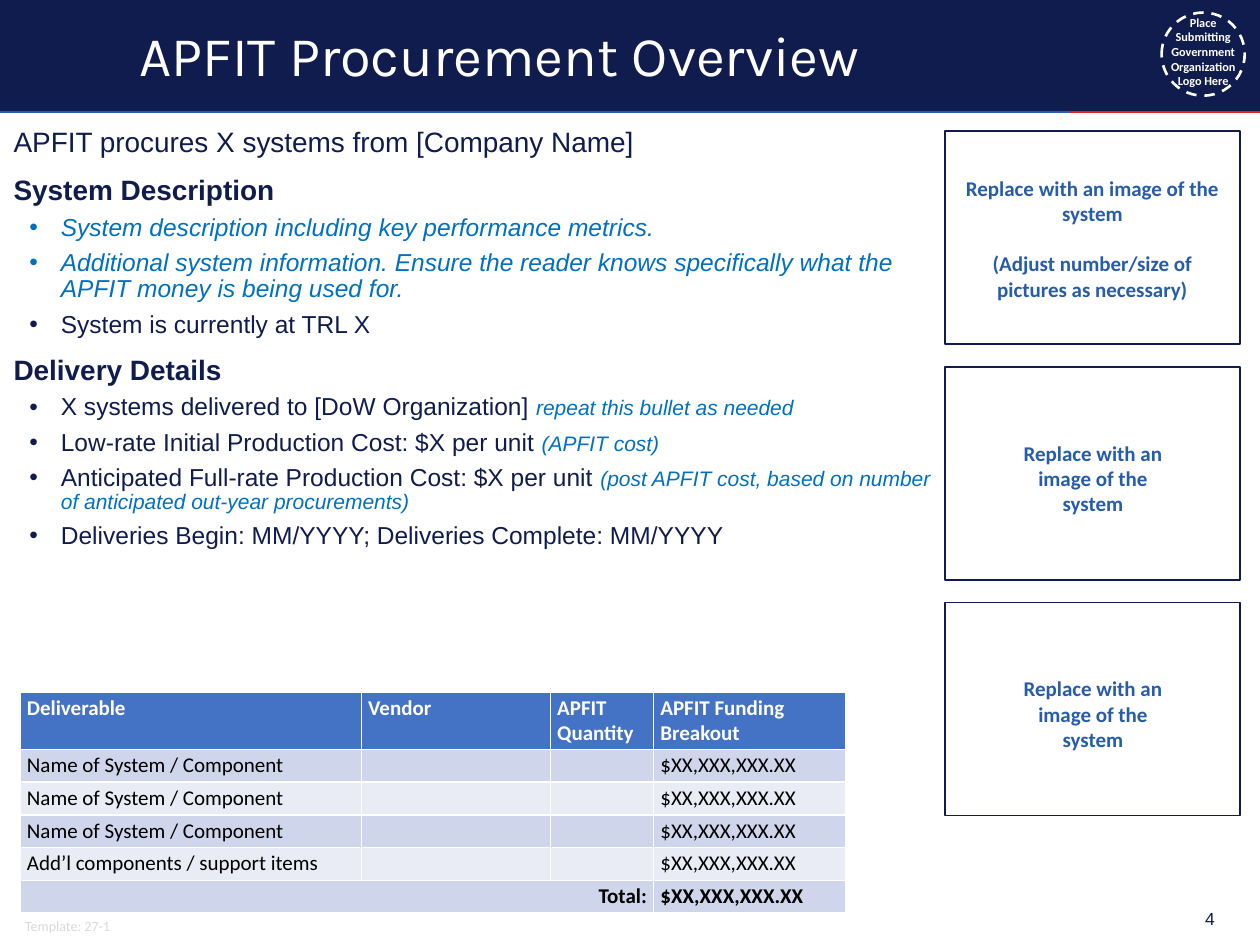
from lxml import etree
from pptx import Presentation
from pptx.dml.color import RGBColor
from pptx.enum.dml import MSO_LINE
from pptx.enum.shapes import MSO_CONNECTOR, MSO_SHAPE
from pptx.enum.text import MSO_ANCHOR, PP_ALIGN
from pptx.oxml.ns import qn
from pptx.util import Pt

RECT, OVAL = MSO_SHAPE.RECTANGLE, MSO_SHAPE.OVAL
LINE = MSO_CONNECTOR.STRAIGHT
DASH = MSO_LINE.DASH
LEFT, MID, RIGHT = PP_ALIGN.LEFT, PP_ALIGN.CENTER, PP_ALIGN.RIGHT
TOP, CENTER = MSO_ANCHOR.TOP, MSO_ANCHOR.MIDDLE

NAVY, BLUE, HINT, RED = "111C4E", "265CAA", "0070C0", "E21E26"
WHITE, BLACK, PALE = "FFFFFF", "000000", "D9D9D9"
HEAD, BANDS = "4472C4", ("CFD5EA", "E9EBF5")

BODY = [
    ("lead", "APFIT procures X systems from [Company Name]", ""),
    ("head", "System Description", ""),
    ("item", "", "System description including key performance metrics."),
    ("item", "", "Additional system information. Ensure the reader knows "
                 "specifically what the APFIT money is being used for."),
    ("item", "System is currently at TRL X", ""),
    ("head", "Delivery Details", ""),
    ("item", "X systems delivered to [DoW Organization] ",
     "repeat this bullet as needed"),
    ("item", "Low-rate Initial Production Cost: $X per unit ", "(APFIT cost)"),
    ("item", "Anticipated Full-rate Production Cost: $X per unit ",
     "(post APFIT cost, based on number of anticipated out-year procurements)"),
    ("item", "Deliveries Begin: MM/YYYY; Deliveries Complete: MM/YYYY", ""),
]
SUM = "$XX,XXX,XXX.XX"
PART = "Name of System / Component"
ROWS = [
    ["Deliverable", "Vendor", "APFIT Quantity", "APFIT Funding Breakout"],
    [PART, "", "", SUM],
    [PART, "", "", SUM],
    [PART, "", "", SUM],
    ["Add’l components / support items", "", "", SUM],
    ["Total:", "", "", SUM],
]
IMAGE = "Replace with an image of the system"


def rgb(code):
    return RGBColor.from_string(code)


def style(font, size, color, name=None, bold=False, slant=False):
    font.size, font.bold, font.italic = Pt(size), bold, slant
    font.color.rgb = rgb(color)
    if name:
        font.name = name


def add_shape(slide, kind, box, fill=None, line=None, width=1, dash=None):
    shape = slide.shapes.add_shape(kind, *map(Pt, box))
    shape.shadow.inherit = False
    if fill:
        shape.fill.solid()
        shape.fill.fore_color.rgb = rgb(fill)
    else:
        shape.fill.background()
    if line:
        shape.line.color.rgb = rgb(line)
        shape.line.width = Pt(width)
        if dash:
            shape.line.dash_style = dash
    else:
        shape.line.fill.background()


def add_line(slide, start, end, color):
    line = slide.shapes.add_connector(LINE, *map(Pt, start + end))
    line.line.color.rgb = rgb(color)
    line.line.width = Pt(1)
    etree.SubElement(line._element.spPr, qn("a:effectLst"))


def add_frame(slide, box, anchor=TOP):
    frame = slide.shapes.add_textbox(*map(Pt, box)).text_frame
    frame.word_wrap = True
    frame.vertical_anchor = anchor
    return frame


def add_text(slide, box, lines, size, color, name="Calibri", bold=False,
             align=LEFT, anchor=TOP, gap=0):
    frame = add_frame(slide, box, anchor)
    for i, line in enumerate(lines):
        para = frame.add_paragraph() if i else frame.paragraphs[0]
        para.text, para.alignment = line, align
        if i:
            para.space_before = Pt(gap)
        style(para.font, size, color, name, bold)


def add_bullet(para):
    props = para._p.get_or_add_pPr()
    props.set("marL", str(Pt(27)))
    props.set("indent", str(-Pt(18)))
    etree.SubElement(props, qn("a:buFont"), typeface="Arial")
    etree.SubElement(props, qn("a:buChar"), char="•")


def add_body(slide, box):
    frame = add_frame(slide, box)
    for i, (kind, text, hint) in enumerate(BODY):
        para = frame.add_paragraph() if i else frame.paragraphs[0]
        item = kind == "item"
        if item:
            add_bullet(para)
        para.line_spacing = 0.9
        if i:
            para.space_before = Pt(5 if item else 10)
        size = 14 if item else 16
        only = bool(hint and not text)
        style(para.font, size, HINT if only else NAVY, "Arial",
              kind == "head", only)
        if text:
            para.add_run().text = text
        if hint:
            run = para.add_run()
            run.text = hint
            if text:
                style(run.font, 12, HINT, slant=True)


def add_grid(slide, box, widths, heights):
    grid = slide.shapes.add_table(len(ROWS), len(widths), *map(Pt, box)).table
    for col, width in zip(grid.columns, widths):
        col.width = Pt(width)
    last = len(ROWS) - 1
    for r, texts in enumerate(ROWS):
        grid.rows[r].height = Pt(heights[r])
        for c, text in enumerate(texts):
            cell = grid.cell(r, c)
            cell.margin_left = cell.margin_right = Pt(3.9)
            cell.margin_top = cell.margin_bottom = Pt(1.9)
            cell.fill.solid()
            cell.fill.fore_color.rgb = rgb(BANDS[(r - 1) % 2] if r else HEAD)
            cell.text = text
            para = cell.text_frame.paragraphs[0]
            style(para.font, 12, BLACK if r else WHITE, "Calibri",
                  r in (0, last))
    total = grid.cell(last, 0)
    total.merge(grid.cell(last, 2))
    total.text_frame.paragraphs[0].alignment = RIGHT


def main():
    deck = Presentation()
    deck.slide_width, deck.slide_height = Pt(720), Pt(540)
    slide = deck.slides.add_slide(deck.slide_layouts[6])

    add_shape(slide, RECT, (0, 0, 720, 64), fill=NAVY)
    add_line(slide, (0, 64), (611.3, 64), BLUE)
    add_line(slide, (720, 64), (611.3, 64), RED)
    add_text(slide, (7.2, 520.6, 70.6, 17.3), ["Template: 27-1"], 8, PALE)
    add_text(slide, (660.2, 5, 54.7, 49.7),
             ["Place Submitting Government Organization Logo Here"],
             7, WHITE, bold=True, align=MID)
    add_shape(slide, OVAL, (663.8, 7.2, 47.5, 47.5), line=WHITE, width=1.5,
              dash=DASH)

    add_body(slide, (0.7, 69.8, 540, 307.4))
    add_text(slide, (72.7, 4.3, 545, 53.3), ["APFIT Procurement Overview"],
             32, WHITE, "Karla", anchor=CENTER)
    add_text(slide, (611.3, 510.5, 90, 28.8), ["4"], 10, NAVY, "Arial",
             align=RIGHT, anchor=CENTER)
    add_grid(slide, (11.5, 395.3, 472.3, 126.5), (195, 108, 59, 110),
             [33] + [18.7] * 5)

    notes = [
        (540, 21.6, 168.5, 79.9,
         [IMAGE, "(Adjust number/size of pictures as necessary)"]),
        (570.2, 38.4, 108.7, 51.1, [IMAGE]),
        (570.2, 38.4, 108.7, 51.1, [IMAGE]),
    ]
    for i, (left, drop, wide, high, lines) in enumerate(notes):
        top = 74.9 + 134.7 * i
        add_shape(slide, RECT, (540, top, 168.5, 121.7), line=NAVY)
        add_text(slide, (left, top + drop, wide, high), lines, 12, BLUE,
                 bold=True, align=MID, gap=14.6)

    deck.save("out.pptx")


if __name__ == "__main__":
    main()
